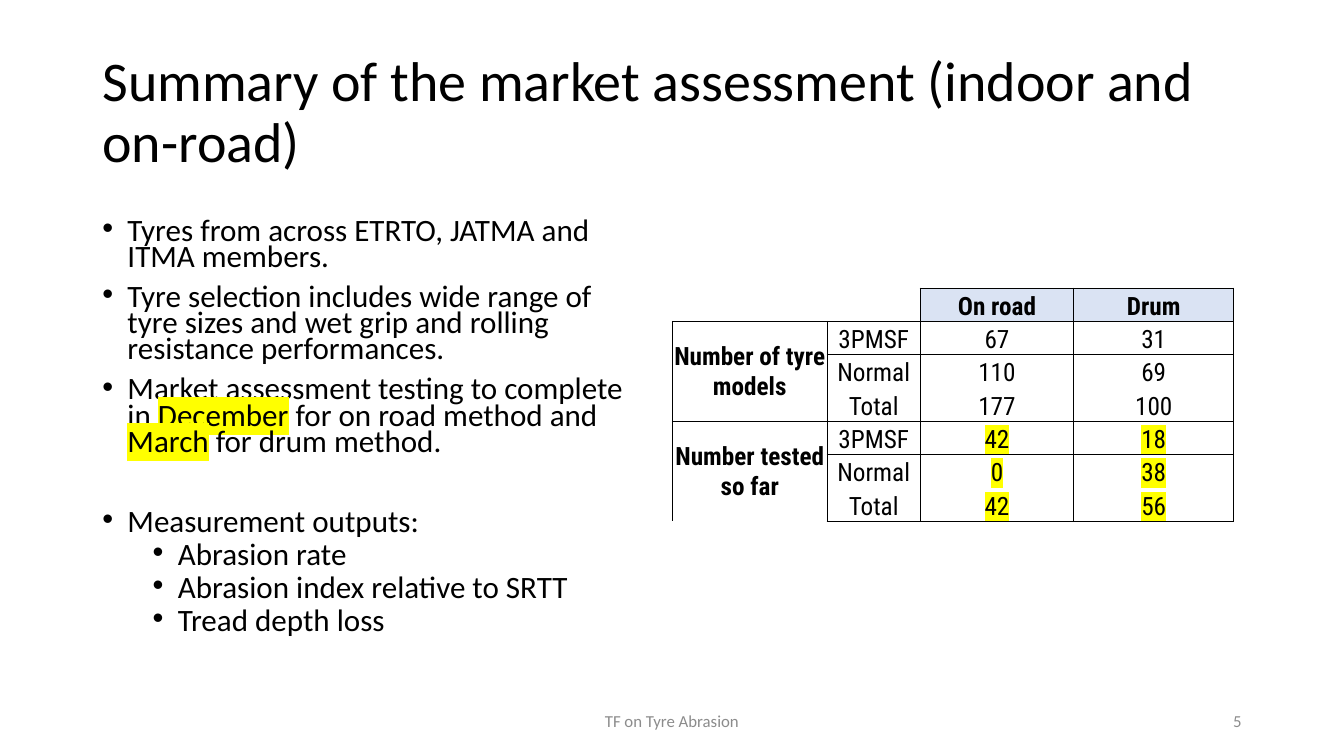
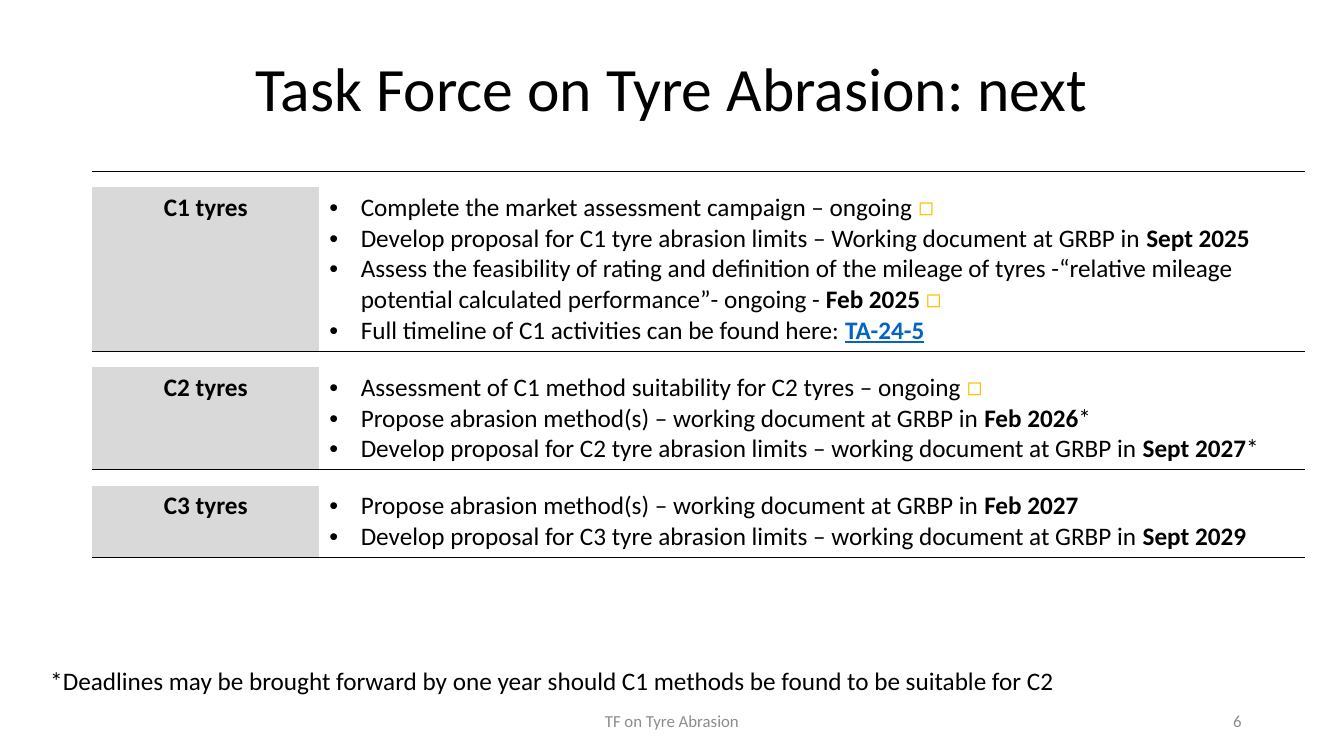
import pptx
import pptx.util
import pptx.dml.color
import pptx.enum.text
import pptx.oxml
import pptx.oxml.ns
from lxml import etree

Pt = pptx.util.Pt
RGB = pptx.dml.color.RGBColor
ALIGN = pptx.enum.text.PP_ALIGN
ANCHOR = pptx.enum.text.MSO_ANCHOR
qn = pptx.oxml.ns.qn

# Colours
BLACK = RGB(0x00, 0x00, 0x00)
GREY = RGB(0x8C, 0x8C, 0x8C)
LABEL_GREY = RGB(0xD9, 0xD9, 0xD9)
HEADER_BLUE = RGB(0xDA, 0xE3, 0xF3)
LINK_BLUE = RGB(0x05, 0x63, 0xC1)
AMBER = RGB(0xFF, 0xC0, 0x00)
YELLOW = RGB(0xFF, 0xFF, 0x00)

# Text styles
TEXT = dict(name="Calibri", size=Pt(18), bold=False, color=BLACK)
TITLE = dict(TEXT, size=Pt(40))
BODY = dict(TEXT, size=Pt(22.2))
FOOTER = dict(TEXT, size=Pt(12), color=GREY)
FIGURE = dict(TEXT, name="Roboto Condensed")
BOLD = dict(bold=True)
MARKED = dict(highlight=YELLOW)
LINK = dict(bold=True, underline=True, color=LINK_BLUE)
ONGOING = ("◻", dict(color=AMBER))

PLAIN_TABLE = "{2D5ABB26-0587-4C30-8999-92F81FD0307C}"
FOOTER_TEXT = "TF on Tyre Abrasion"

# Slide content: a paragraph is a string or a list of strings and (text, style)
OVERVIEW = [
    "Tyres from across ETRTO, JATMA and ITMA members.",
    "Tyre selection includes wide range of tyre sizes and wet grip and rolling "
    "resistance performances.",
    ["Market assessment testing to complete in ", ("December", MARKED),
     " for on road method and ", ("March", MARKED), " for drum method."],
]
OUTPUTS = ["Abrasion rate", "Abrasion index relative to SRTT", "Tread depth loss"]

COUNT_HEADS = ["On road", "Drum"]
COUNTS = [
    ("Number of tyre models", {},
     [("3PMSF", "67", "31"), ("Normal", "110", "69"), ("Total", "177", "100")]),
    ("Number tested so far", MARKED,
     [("3PMSF", "42", "18"), ("Normal", "0", "38"), ("Total", "42", "56")]),
]

# Label, tasks, number of text lines
PLAN = [
    ("C1 tyres", [
        ["Complete the market assessment campaign – ongoing ", ONGOING],
        ["Develop proposal for C1 tyre abrasion limits – Working document at GRBP in ",
         ("Sept 2025", BOLD)],
        ["Assess the feasibility of rating and definition of the mileage of tyres "
         "-“relative mileage potential calculated performance”- ongoing - ",
         ("Feb 2025 ", BOLD), ONGOING],
        ["Full timeline of C1 activities can be found here: ", ("TA-24-5", LINK)],
    ], 5),
    ("C2 tyres", [
        ["Assessment of C1 method suitability for C2 tyres – ongoing ", ONGOING],
        ["Propose abrasion method(s) – working document at GRBP in ",
         ("Feb 2026", BOLD), "*"],
        ["Develop proposal for C2 tyre abrasion limits – working document at GRBP in ",
         ("Sept 2027", BOLD), "*"],
    ], 3),
    ("C3 tyres", [
        ["Propose abrasion method(s) – working document at GRBP in ",
         ("Feb 2027", BOLD)],
        ["Develop proposal for C3 tyre abrasion limits – working document at GRBP in ",
         ("Sept 2029", BOLD)],
    ], 2),
]


# Text helpers
def format_run(r, style):
    for key, value in style.items():
        if key == "color":
            r.font.color.rgb = value
        elif key != "highlight":
            setattr(r.font, key, value)
    if "highlight" in style:
        mark = etree.Element(qn("a:highlight"))
        etree.SubElement(mark, qn("a:srgbClr")).set("val", str(style["highlight"]))
        r.font._element.find(qn("a:solidFill")).addnext(mark)


def set_bullet(p, left, hang):
    pPr = p._p.get_or_add_pPr()
    pPr.set("marL", str(Pt(left)))
    pPr.set("indent", str(-Pt(hang)))
    etree.SubElement(pPr, qn("a:buFont")).set("typeface", "Arial")
    etree.SubElement(pPr, qn("a:buChar")).set("char", "•")


def write(tf, paragraphs, style, bullet=None, **layout):
    """Add paragraphs to a frame, starting with its first one if it is empty."""
    for content in paragraphs:
        p = tf.paragraphs[0]
        if p.runs:
            p = tf.add_paragraph()
        if bullet:
            set_bullet(p, *bullet)
        for key, value in layout.items():
            setattr(p, key, value)
        for part in [content] if isinstance(content, str) else content:
            text, extra = (part, {}) if isinstance(part, str) else part
            r = p.add_run()
            r.text = text
            format_run(r, {**style, **extra})


def add_text(s, box, paragraphs, style, anchor=ANCHOR.TOP, **layout):
    tf = s.shapes.add_textbox(*map(Pt, box)).text_frame
    tf.word_wrap = True
    tf.vertical_anchor = anchor
    write(tf, paragraphs, style, **layout)
    return tf


# Slide frame: title, footer and number
def add_slide(prs, title, number, height, size, align):
    s = prs.slides.add_slide(prs.slide_layouts[5])
    sp = s.shapes.title
    sp.left, sp.top, sp.width, sp.height = map(Pt, (66, 29, 828, height))
    tf = sp.text_frame
    tf.auto_size = pptx.enum.text.MSO_AUTO_SIZE.NONE
    tf.vertical_anchor = ANCHOR.MIDDLE
    write(tf, [title], dict(TITLE, size=Pt(size)), alignment=align, line_spacing=0.9)
    add_text(s, (318, 500.5, 324, 28.8), [FOOTER_TEXT], FOOTER, ANCHOR.MIDDLE,
             alignment=ALIGN.CENTER)
    add_text(s, (678, 500.5, 216, 28.8), [str(number)], FOOTER, ANCHOR.MIDDLE,
             alignment=ALIGN.RIGHT)
    return s


# Table helpers
def add_table(s, left, top, widths, heights):
    frame = s.shapes.add_table(len(heights), len(widths), Pt(left), Pt(top),
                               Pt(sum(widths)), Pt(sum(heights)))
    table = frame.table
    table.first_row = table.horz_banding = False
    table._tbl.tblPr.find(qn("a:tableStyleId")).text = PLAIN_TABLE
    for column, width in zip(table.columns, widths):
        column.width = Pt(width)
    for row, height in zip(table.rows, heights):
        row.height = Pt(height)
    return table


def style_cell(cell, sides="", fill=None, margins=None, anchor=None):
    """Sides are letters out of LRTB that get a thin black line."""
    tcPr = cell._tc.get_or_add_tcPr()
    for side in "LRTB":
        if side in sides:
            ln = etree.SubElement(tcPr, qn("a:ln" + side), w=str(Pt(1)))
            color = etree.SubElement(ln, qn("a:solidFill"))
            etree.SubElement(color, qn("a:srgbClr")).set("val", str(BLACK))
    if fill is None:
        cell.fill.background()
    else:
        cell.fill.solid()
        cell.fill.fore_color.rgb = fill
    if margins:
        for edge, value in zip(("left", "top", "right", "bottom"), margins):
            setattr(cell, "margin_" + edge, Pt(value))
    if anchor is not None:
        cell.vertical_anchor = anchor


def count_sides(row, col):
    """Lines of the count table: columns, header and groups of three rows."""
    if row == 0:
        return ("B", "B", "LTB", "RTB")[col]
    sides = "R" if col == 3 else "LR" if col < 2 else "L"
    return sides + ("", "T", "", "B")[(row - 1) % 3 + 1]


def add_counts(s):
    table = add_table(s, 480.3, 205.9, [110.5, 66.6, 109.5, 114.5], [23.8] * 7)
    for row in range(7):
        for col in range(4):
            style_cell(table.cell(row, col), count_sides(row, col),
                       HEADER_BLUE if row == 0 and col > 1 else None,
                       (0.7, 0.7, 0.7, 0),
                       ANCHOR.MIDDLE if col == 0 else ANCHOR.BOTTOM)

    def put(row, col, text, style):
        write(table.cell(row, col).text_frame, [text], {**FIGURE, **style},
              alignment=ALIGN.CENTER)

    for col, head in enumerate(COUNT_HEADS, 2):
        put(0, col, head, BOLD)
    for group, (label, style, rows) in enumerate(COUNTS):
        first = 1 + 3 * group
        table.cell(first, 0).merge(table.cell(first + 2, 0))
        put(first, 0, label, BOLD)
        for row, (kind, *values) in enumerate(rows, first):
            put(row, 1, kind, {})
            for col, value in enumerate(values, 2):
                put(row, col, value, style)


def add_plan(s):
    heights = []
    for _, _, lines in PLAN:
        heights += [11.4, 7.2 + 22 * lines]
    table = add_table(s, 66, 122.4, [162, 704], heights)
    for i, (label, tasks, _) in enumerate(PLAN):
        # Narrow spacer row
        for cell in table.rows[2 * i].cells:
            style_cell(cell, "T" if i == 0 else "", margins=(0, 0, 0, 0))
            p = cell.text_frame.paragraphs[0]
            p._p.get_or_add_endParaRPr().set("sz", "500")
        name, details = table.rows[2 * i + 1].cells
        style_cell(name, "B", LABEL_GREY)
        write(name.text_frame, [label], {**TEXT, **BOLD}, alignment=ALIGN.CENTER)
        style_cell(details, "B")
        write(details.text_frame, tasks, TEXT, bullet=(22.5, 22.5))


# Slides
def add_summary_slide(prs):
    s = add_slide(prs, "Summary of the market assessment (indoor and on-road)",
                  5, 104.4, 40, ALIGN.LEFT)
    tf = add_text(s, (66, 154, 401, 305), OVERVIEW, BODY, bullet=(18, 18),
                  line_spacing=0.7, space_before=Pt(10))
    write(tf, ["Measurement outputs:"], BODY, bullet=(18, 18),
          line_spacing=0.7, space_before=Pt(38.5))
    write(tf, OUTPUTS, BODY, bullet=(54, 18), level=1,
          line_spacing=0.7, space_before=Pt(5))
    add_counts(s)


def add_next_slide(prs):
    s = add_slide(prs, "Task Force on Tyre Abrasion: next", 6, 72.7, 44, ALIGN.CENTER)
    add_plan(s)
    add_text(s, (28.8, 471.6, 815, 29),
             ["*Deadlines may be brought forward by one year should C1 methods "
              "be found to be suitable for C2"], TEXT)


def main():
    prs = pptx.Presentation()
    prs.slide_width, prs.slide_height = Pt(960), Pt(540)
    add_summary_slide(prs)
    add_next_slide(prs)
    prs.save("out.pptx")


if __name__ == "__main__":
    main()
